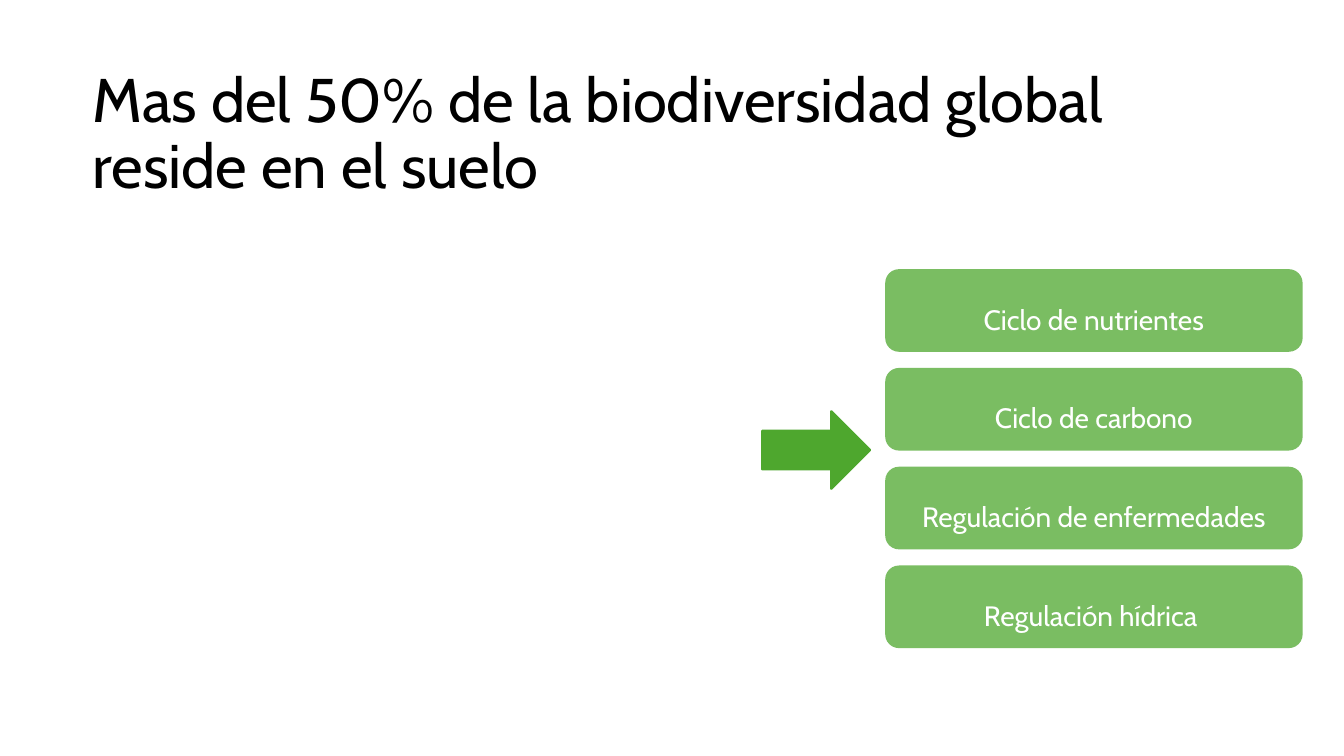
"""Build a slide on soil biodiversity and the cycles it sustains."""
from dataclasses import dataclass

from lxml import etree
from pptx import Presentation
from pptx.dml import color
from pptx.enum import shapes, text
from pptx.oxml import ns
from pptx import util as u

COLORS = {"green": "4EA72E", "black": "000000", "white": "FFFFFF"}
FONT = "Cabin"
SERVICE_LEFT, SERVICE_TOP, SERVICE_PITCH = 8.78, 2.67, 0.98
SERVICES = ["Ciclo de nutrientes", "Ciclo de carbono",
            "Regulación de enfermedades", "Regulación hídrica "]


@dataclass
class Box:
    left: float
    top: float
    width: float
    height: float

    def lengths(self) -> list:
        return [u.Inches(v) for v in (self.left, self.top, self.width, self.height)]


def rgb(name: str) -> color.RGBColor:
    return color.RGBColor.from_string(COLORS[name])


def write(sp, words: str, size: int, ink: str, spacing: float, align) -> None:
    tf = sp.text_frame
    tf.word_wrap = True
    tf.vertical_anchor = text.MSO_ANCHOR.MIDDLE
    p = tf.paragraphs[0]
    p.alignment = align
    p.line_spacing = spacing
    r = p.add_run()
    r.text = words
    r.font.name = FONT
    r.font.size = u.Pt(size)
    r.font.color.rgb = rgb(ink)


def add_green(s, kind, box: Box):
    sp = s.shapes.add_shape(kind, *box.lengths())
    sp.shadow.inherit = False
    sp.fill.solid()
    sp.fill.fore_color.rgb = rgb("green")
    return sp


def add_service(s, words: str, box: Box) -> None:
    sp = add_green(s, shapes.MSO_SHAPE.ROUNDED_RECTANGLE, box)
    sp.line.fill.background()
    srgb = sp.fill._xPr.find(ns.qn("a:solidFill")).find(ns.qn("a:srgbClr"))
    etree.SubElement(srgb, ns.qn("a:alpha"), val="75000")
    write(sp, words, 20, "white", 1.5, text.PP_ALIGN.CENTER)


def main() -> None:
    prs = Presentation()
    prs.slide_width, prs.slide_height = u.Inches(13.33), u.Inches(7.5)
    s = prs.slides.add_slide(prs.slide_layouts[6])

    title = s.shapes.add_textbox(*Box(0.82, 0.62, 11.5, 1.45).lengths())
    write(title, "Mas del 50% de la biodiversidad global reside en el suelo",
          44, "black", 0.9, text.PP_ALIGN.LEFT)

    for i, words in enumerate(SERVICES):
        top = SERVICE_TOP + i * SERVICE_PITCH
        add_service(s, words, Box(SERVICE_LEFT, top, 4.14, 0.82))

    arrow = add_green(s, shapes.MSO_SHAPE.RIGHT_ARROW, Box(7.56, 4.08, 1.07, 0.77))
    arrow.line.color.rgb = rgb("green")
    arrow.line.width = u.Pt(1.5)

    prs.save("out.pptx")


if __name__ == "__main__":
    main()
